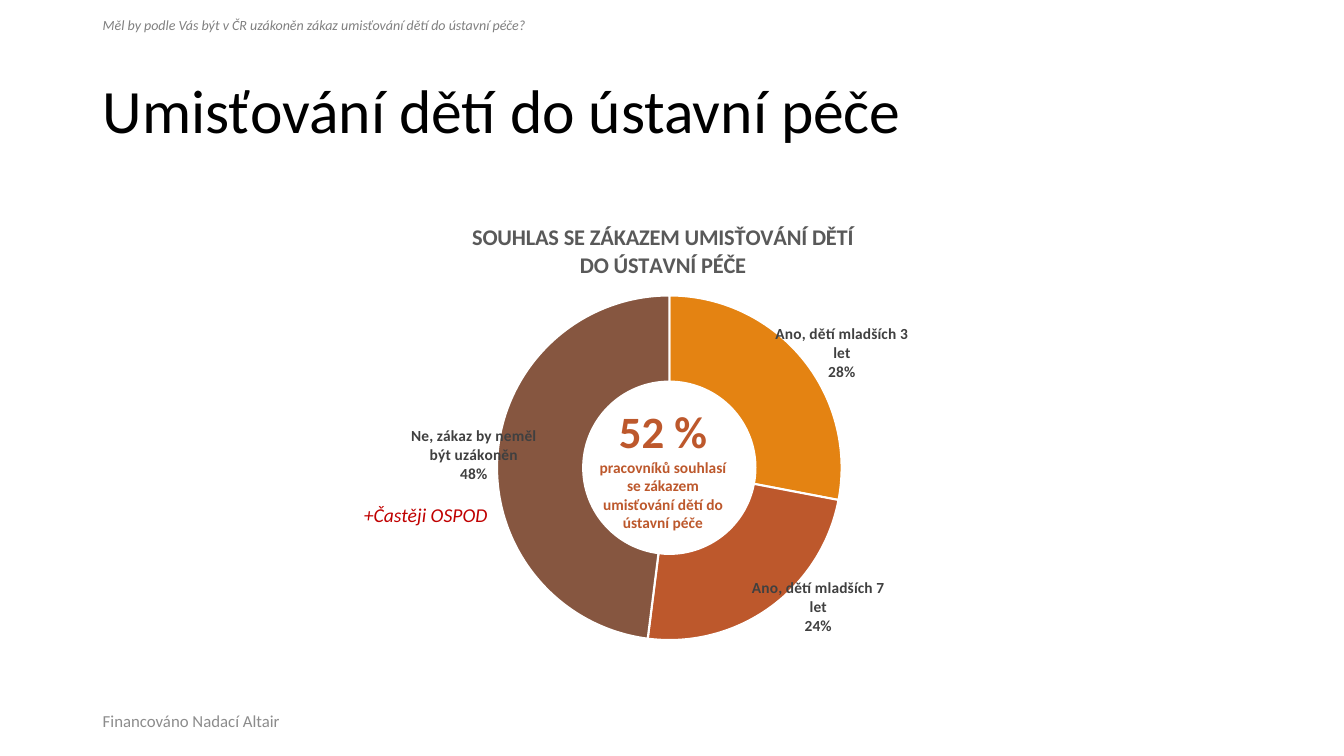
import dataclasses

import pptx
import pptx.chart.data
import pptx.dml.color
import pptx.enum.chart
import pptx.enum.text
import pptx.oxml
import pptx.oxml.ns
import pptx.util

Cm = pptx.util.Cm
ALIGN = pptx.enum.text.PP_ALIGN
ANCHOR = pptx.enum.text.MSO_ANCHOR


@dataclasses.dataclass(frozen=True)
class Theme:
    font: str = "Calibri"
    black: str = "000000"
    footer_grey: str = "8C8C8C"
    question_grey: str = "808080"
    heading_grey: str = "595959"
    label_grey: str = "404040"
    white: str = "FFFFFF"
    orange: str = "E48312"
    rust: str = "BD582C"
    brown: str = "865640"
    red: str = "C00000"
    title_size: int = 44
    share_size: int = 32
    heading_size: int = 16
    remark_size: int = 14
    footer_size: int = 12
    label_size: int = 11
    small_size: int = 10


THEME = Theme()


@dataclasses.dataclass(frozen=True)
class Line:
    text: str
    size: int
    color: str
    style: dict = dataclasses.field(default_factory=dict)


@dataclasses.dataclass(frozen=True)
class Caption:
    box: tuple  # left, top, width, height in cm
    lines: tuple
    anchor: ANCHOR = ANCHOR.TOP
    paragraph: dict = dataclasses.field(default_factory=dict)
    wrap: bool = True


@dataclasses.dataclass(frozen=True)
class Answer:
    text: str
    percent: int
    color: str
    label_shift: tuple  # label offset as a share of chart width and height


CAPTIONS = (
    Caption((2.34, 1.02, 29.21, 3.68),
            (Line("Umisťování dětí do ústavní péče", THEME.title_size, THEME.black),),
            ANCHOR.MIDDLE, {"line_spacing": 0.9}),
    Caption((2.34, 17.65, 25.22, 1.02),
            (Line("Financováno Nadací Altair", THEME.footer_size, THEME.footer_grey),),
            ANCHOR.MIDDLE),
    Caption((14.83, 10.06, 3.76, 3.51),
            (Line("52 %", THEME.share_size, THEME.rust, {"bold": True}),
             Line("pracovníků souhlasí se zákazem umisťování dětí do ústavní péče",
                  THEME.label_size, THEME.rust, {"bold": True})),
            paragraph={"alignment": ALIGN.CENTER}),
    Caption((8.92, 12.55, 4.52, 0.86),
            (Line("+Častěji OSPOD", THEME.remark_size, THEME.red, {"italic": True}),)),
    Caption((2.34, 0.28, 11.43, 0.69),
            (Line("Měl by podle Vás být v ČR uzákoněn zákaz umisťování dětí do ústavní péče?",
                  THEME.small_size, THEME.question_grey, {"italic": True}),),
            wrap=False),
)

ANSWERS = (
    Answer("Ano, dětí mladších 3 let", 28, THEME.orange, (0.145, -0.07)),
    Answer("Ano, dětí mladších 7 let", 24, THEME.rust, (0.145, 0.076)),
    Answer("Ne, zákaz by neměl být uzákoněn", 48, THEME.brown, (-0.133, -0.01)),
)


def rgb(color: str) -> pptx.dml.color.RGBColor:
    return pptx.dml.color.RGBColor.from_string(color)


def apply(target, values: dict) -> None:
    for name, value in values.items():
        setattr(target, name, value)


def style_font(font, size: int, color: str, style: dict) -> None:
    apply(font, {"name": THEME.font, "size": pptx.util.Pt(size), **style})
    font.color.rgb = rgb(color)


def add_caption(slide, caption: Caption) -> None:
    frame = slide.shapes.add_textbox(*map(Cm, caption.box)).text_frame
    apply(frame, {"word_wrap": caption.wrap, "vertical_anchor": caption.anchor})
    for index, line in enumerate(caption.lines):
        paragraph = frame.add_paragraph() if index else frame.paragraphs[0]
        apply(paragraph, caption.paragraph)
        run = paragraph.add_run()
        run.text = line.text
        style_font(run.font, line.size, line.color, line.style)


def layout_xml(values: dict) -> str:
    fields = "".join(f'<c:{name} val="{value}"/>' for name, value in values.items())
    return (f'<c:layout {pptx.oxml.ns.nsdecls("c")}>'
            f"<c:manualLayout>{fields}</c:manualLayout></c:layout>")


def label_xml(index: int, answer: Answer) -> str:
    x, y = answer.label_shift
    shown = {"LegendKey": 0, "Val": 0, "CatName": 1, "SerName": 0, "Percent": 1, "BubbleSize": 0}
    flags = "".join(f'<c:show{name} val="{value}"/>' for name, value in shown.items())
    return (f'<c:dLbl {pptx.oxml.ns.nsdecls("c")}><c:idx val="{index}"/>'
            f'{layout_xml({"x": x, "y": y})}{flags}<c:separator>\n</c:separator></c:dLbl>')


def add_agreement_chart(slide, answers: tuple) -> None:
    data = pptx.chart.data.CategoryChartData(number_format="0")
    data.categories = [answer.text for answer in answers]
    data.add_series("Souhlas", [answer.percent for answer in answers])
    chart = slide.shapes.add_chart(
        pptx.enum.chart.XL_CHART_TYPE.DOUGHNUT,
        Cm(10.36), Cm(5.13), Cm(12.7), Cm(11.58), data).chart
    chart.has_legend = False
    style_font(chart.font, THEME.small_size, THEME.black, {})

    # Heading
    heading = chart.chart_title.text_frame.paragraphs[0].add_run()
    heading.text = "SOUHLAS SE ZÁKAZEM UMISŤOVÁNÍ DĚTÍ DO ÚSTAVNÍ PÉČE"
    style_font(heading.font, THEME.heading_size, THEME.heading_grey, {"bold": True})

    # Ring segments
    plot = chart.plots[0]
    plot.vary_by_categories = True
    series = plot.series[0]
    for index, answer in enumerate(answers):
        segment = series.points[index].format
        segment.fill.solid()
        segment.fill.fore_color.rgb = rgb(answer.color)
        segment.line.color.rgb = rgb(THEME.white)
        segment.line.width = pptx.util.Pt(1.5)

    # Labels: shared style first, then one shifted label per answer
    labels = series.data_labels
    apply(labels, {"show_category_name": True, "show_percentage": True, "show_value": False,
                   "number_format": "0%", "number_format_is_linked": False})
    style_font(labels.font, THEME.label_size, THEME.label_grey, {"bold": True})
    ring = chart.element.xpath(".//c:doughnutChart")[0]
    shared = ring.xpath("./c:ser/c:dLbls")[0]
    look = shared.xpath("./c:numFmt | ./c:txPr")
    for index, answer in enumerate(answers):
        label = pptx.oxml.parse_xml(label_xml(index, answer))
        for offset, part in enumerate(look):
            label.insert(2 + offset, pptx.oxml.parse_xml(part.xml))
        shared.insert(index, label)

    # Ring place and hole
    ring.xpath("./c:holeSize")[0].set("val", "75")
    area = ring.getparent()
    for old in area.xpath("./c:layout"):
        area.remove(old)
    area.insert(0, pptx.oxml.parse_xml(layout_xml({
        "layoutTarget": "inner", "xMode": "edge", "yMode": "edge",
        "x": 0.17, "y": 0.2, "w": 0.685, "h": 0.75})))


def main() -> None:
    deck = pptx.Presentation()
    apply(deck, {"slide_width": Cm(33.87), "slide_height": Cm(19.05)})
    slide = deck.slides.add_slide(deck.slide_layouts[6])
    add_agreement_chart(slide, ANSWERS)
    for caption in CAPTIONS:
        add_caption(slide, caption)
    deck.save("out.pptx")


if __name__ == "__main__":
    main()
